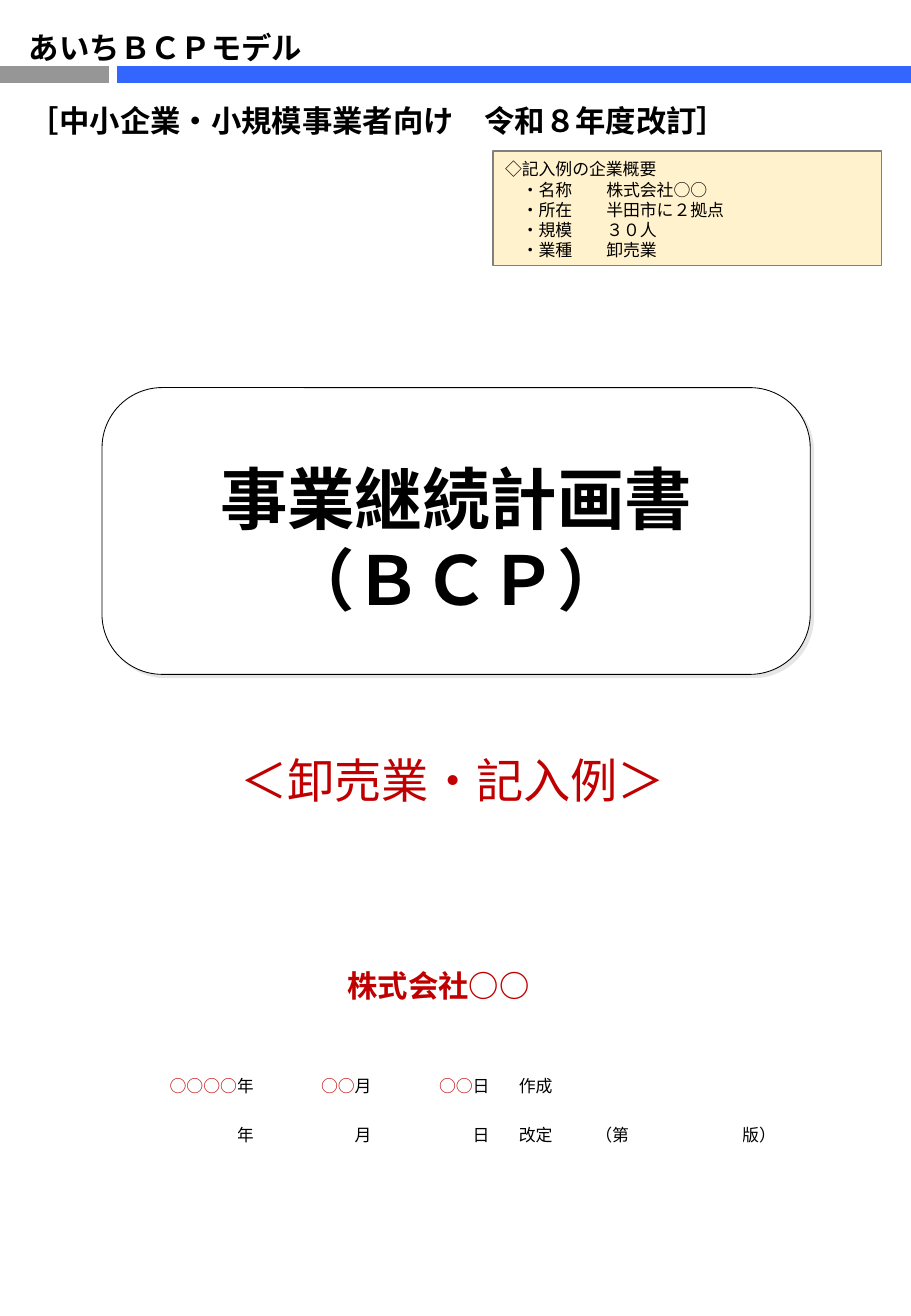
from lxml import etree
from pptx import Presentation
from pptx.dml.color import RGBColor
from pptx.enum import shapes, text
from pptx.oxml import ns
from pptx.util import Pt

FONT = "Noto Sans CJK JP"
RED, BLACK, WHITE = "C00000", "000000", "FFFFFF"
LEFT, MID, RIGHT = text.PP_ALIGN.LEFT, text.PP_ALIGN.CENTER, text.PP_ALIGN.RIGHT


def rgb(code):
    return RGBColor.from_string(code)


def style(para, size, hue=BLACK, bold=False, align=LEFT, font=FONT):
    para.alignment = align
    para.line_spacing = Pt(size * 1.2)
    para.font.size = Pt(size)
    for run in para.runs:
        run.font.size = Pt(size)
        run.font.bold = bold
        run.font.color.rgb = rgb(hue)
        run.font.name = font
        east = etree.SubElement(run._r.get_or_add_rPr(), ns.qn("a:ea"))
        east.set("typeface", font)


prs = Presentation()
prs.slide_width, prs.slide_height = Pt(540), Pt(779.76)
slide = prs.slides.add_slide(prs.slide_layouts[6])
items = slide.shapes

# Header bars
for start, end, hue in ((0, 64.8, "969696"), (69.12, 540, "3366FF")):
    bar = items.add_connector(shapes.MSO_CONNECTOR.STRAIGHT, Pt(start), Pt(44), Pt(end), Pt(44))
    bar.line.color.rgb = rgb(hue)
    bar.line.width = Pt(10)
    etree.SubElement(bar._element.spPr, ns.qn("a:effectLst"))

# Plan title panel
panel = items.add_shape(shapes.MSO_SHAPE.ROUNDED_RECTANGLE, Pt(60.5), Pt(229.7), Pt(419.8), Pt(169.9))
panel.adjustments[0] = 0.21
panel.shadow.inherit = False
panel.fill.solid()
panel.fill.fore_color.rgb = rgb(WHITE)
panel.line.color.rgb = rgb(BLACK)
panel.line.width = Pt(0.5)
glow = etree.SubElement(panel._element.spPr.find(ns.qn("a:effectLst")), ns.qn("a:outerShdw"),
                        dist=str(Pt(2.8)), dir="2700000", algn="ctr", rotWithShape="0")
etree.SubElement(glow, ns.qn("a:srgbClr"), val="E7E6E6")
frame = panel.text_frame
frame.vertical_anchor = text.MSO_ANCHOR.MIDDLE
frame.margin_top, frame.margin_bottom = Pt(8), Pt(0)
frame.text = "事業継続計画書\v（ＢＣＰ）"
style(frame.paragraphs[0], 40, bold=True, align=MID)

# Heading
head = items.add_textbox(Pt(10.1), Pt(11.5), Pt(450.7), Pt(72.7)).text_frame
head.word_wrap = True
head.margin_top = Pt(5.6)
head.text = "あいちＢＣＰモデル"
style(head.paragraphs[0], 18, bold=True)
sub = head.add_paragraph()
for part in ("［", "中小企業・小規模事業者向け　令和８年度改訂", "］"):
    sub.add_run().text = part
style(sub, 18, bold=True)
sub.space_before = Pt(21.6)
inner = sub.runs[1]
inner.font.name = "Arial"
inner._r.rPr.find(ns.qn("a:ea")).set("typeface", "Arial")

# Date table
rows = (("○○○○", "年", "○○", "月", "○○", "日", "作成", "", "", ""),
        ("", "年", "", "月", "", "日", "改定", "（第", "", "版）"))
table = items.add_table(2, 10, Pt(55.4), Pt(633.6), Pt(429.8), Pt(58.6)).table
table.first_row = table.horz_banding = False
for col, width in zip(table.columns, (85, 27.4, 42.5, 27.4, 42.5, 27.4, 45.4, 44.6, 42.5, 44.6)):
    col.width = Pt(width)
for r, row in enumerate(rows):
    table.rows[r].height = Pt(29.3)
    for c, word in enumerate(row):
        cell = table.cell(r, c)
        cell.fill.background()
        cell.margin_left = cell.margin_right = 0
        cell.margin_top, cell.margin_bottom = Pt(4.5), Pt(2.9)
        cell.text = word
        blank = word.startswith("○")
        style(cell.text_frame.paragraphs[0], 10, RED if blank else BLACK,
              align=RIGHT if blank else LEFT)

# Sample company box
box = items.add_shape(shapes.MSO_SHAPE.RECTANGLE, Pt(292.3), Pt(89.5), Pt(230.4), Pt(67.7))
box.shadow.inherit = False
box.fill.solid()
box.fill.fore_color.rgb = rgb("FFF2CC")
box.line.color.rgb = rgb("808080")
box.line.width = Pt(0.75)
frame = box.text_frame
frame.vertical_anchor = text.MSO_ANCHOR.TOP
frame.margin_top, frame.margin_bottom = Pt(4.8), Pt(2)
facts = (("名称", "株式会社○○"), ("所在", "半田市に２拠点"), ("規模", "３０人"), ("業種", "卸売業"))
frame.text = "\n".join(["◇記入例の企業概要"] + [f"　・{key}\t{value}" for key, value in facts])
for para in frame.paragraphs:
    tabs = etree.SubElement(para._p.get_or_add_pPr(), ns.qn("a:tabLst"))
    etree.SubElement(tabs, ns.qn("a:tab"), pos=str(Pt(60)), algn="l")
    style(para, 10)

# Company name and sample label
labels = (("株式会社○○", 40.3, 567.4, 439.2, 28.8, 18, True, MID),
          ("＜卸売業・記入例＞", 135.4, 438.5, 268.6, 41, 28, False, LEFT))
for word, x, y, w, h, size, bold, align in labels:
    frame = items.add_textbox(Pt(x), Pt(y), Pt(w), Pt(h)).text_frame
    frame.word_wrap = True
    frame.margin_top = Pt(3.6 + size * 0.11)
    frame.text = word
    style(frame.paragraphs[0], size, RED, bold, align)

prs.save("out.pptx")
